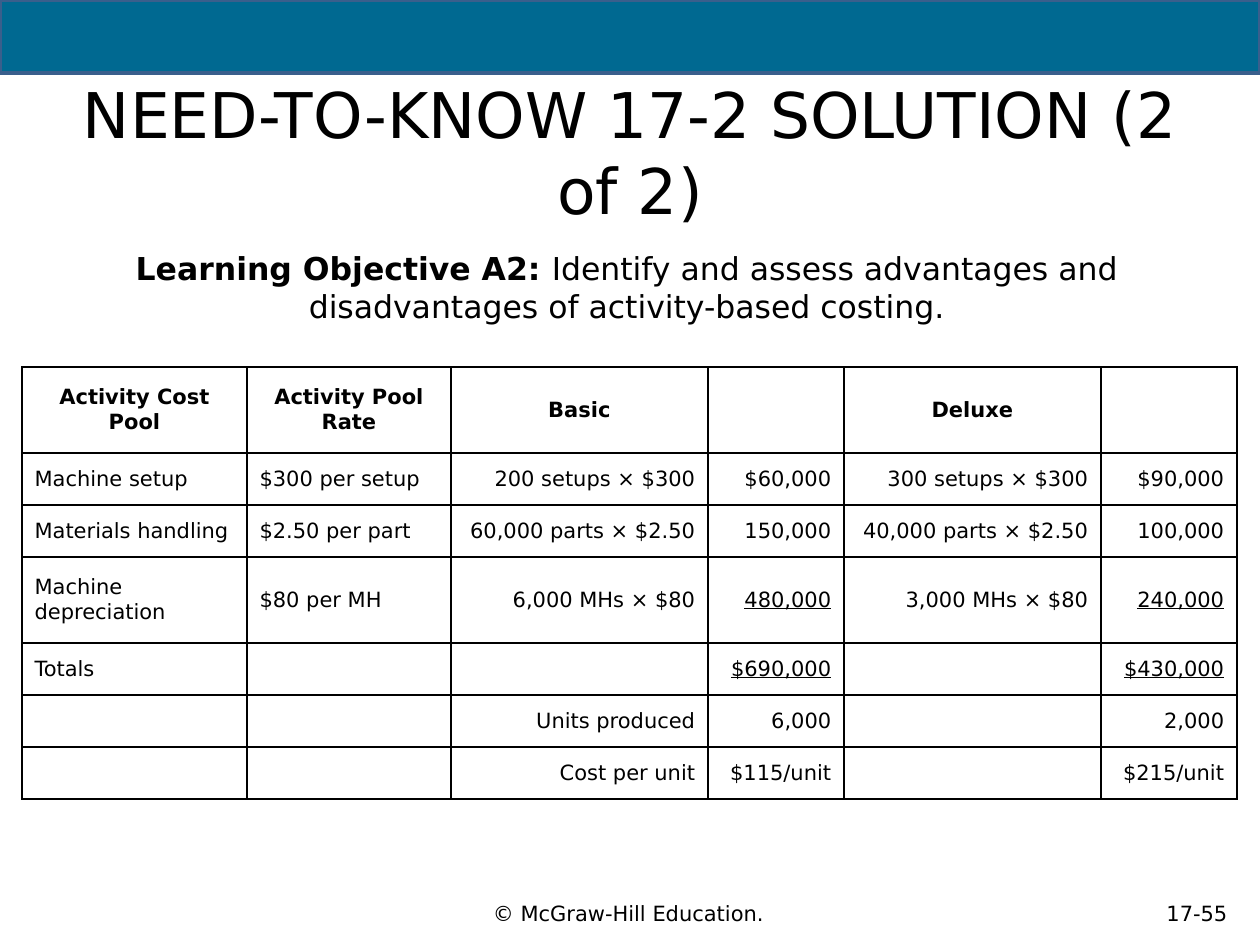
from lxml.etree import SubElement
from pptx import Presentation
from pptx.dml.color import RGBColor
from pptx.enum.shapes import MSO_SHAPE
from pptx.enum.text import MSO_ANCHOR, MSO_AUTO_SIZE, PP_ALIGN
from pptx.oxml.ns import qn
from pptx.util import Emu, Pt

PX_PER_INCH = 126
SLIDE_WIDTH, SLIDE_HEIGHT = 1260, 945
FONT = "DejaVu Sans"
BLACK = RGBColor(0x00, 0x00, 0x00)
WHITE = RGBColor(0xFF, 0xFF, 0xFF)
TEAL = RGBColor(0x00, 0x69, 0x91)
BAND_EDGE = RGBColor(0x3A, 0x5F, 0x8C)

COLUMN_WIDTHS = [225, 204, 257, 136, 257, 136]
ROW_HEIGHTS = [86, 52, 52, 86, 52, 52, 52]
COST_TABLE = [
    ["Activity Cost Pool", "Activity Pool Rate", "Basic", "", "Deluxe", ""],
    ["Machine setup", "$300 per setup", "200 setups × $300", "$60,000",
     "300 setups × $300", "$90,000"],
    ["Materials handling", "$2.50 per part", "60,000 parts × $2.50", "150,000",
     "40,000 parts × $2.50", "100,000"],
    ["Machine depreciation", "$80 per MH", "6,000 MHs × $80", "480,000",
     "3,000 MHs × $80", "240,000"],
    ["Totals", "", "", "$690,000", "", "$430,000"],
    ["", "", "Units produced", "6,000", "", "2,000"],
    ["", "", "Cost per unit", "$115/unit", "", "$215/unit"],
]
UNDERLINED = {"480,000", "240,000", "$690,000", "$430,000"}


def px(length):
    return Emu(round(length * 914400 / PX_PER_INCH))


class SlideBuilder:
    def __init__(self, slide):
        self.slide = slide
        self.font_style = {"name": FONT}

    def style_font(self, font, **values):
        for name, value in {**self.font_style, **values}.items():
            setattr(font, name, value)
        font.color.rgb = BLACK

    def fill_text(self, frame, runs, size, anchor=MSO_ANCHOR.MIDDLE):
        """Fill a frame with one centred paragraph of (text, bold) runs."""
        frame_style = {"word_wrap": True, "auto_size": MSO_AUTO_SIZE.NONE,
                       "vertical_anchor": anchor}
        for name, value in frame_style.items():
            setattr(frame, name, value)
        paragraph = frame.paragraphs[0]
        paragraph.alignment = PP_ALIGN.CENTER
        paragraph.space_before = Pt(0)
        for text, bold in runs:
            run = paragraph.add_run()
            run.text = text
            self.style_font(run.font, size=Pt(size), bold=bold)
        return paragraph

    def place(self, shape, box):
        for name, length in zip(("left", "top", "width", "height"), box):
            setattr(shape, name, px(length))

    def band(self, box):
        shape = self.slide.shapes.add_shape(MSO_SHAPE.RECTANGLE, *map(px, box))
        shape.shadow.inherit = False
        shape.fill.solid()
        shape.fill.fore_color.rgb = TEAL
        shape.line.color.rgb = BAND_EDGE
        shape.line.width = Pt(2)

    def label(self, box, text):
        text_box = self.slide.shapes.add_textbox(*map(px, box))
        self.fill_text(text_box.text_frame, [(text, False)], 12)

    def title(self, box, text):
        title = self.slide.shapes.title
        self.place(title, box)
        self.fill_text(title.text_frame, [(text, False)], 36)

    def body(self, box, runs):
        body = self.slide.placeholders[1]
        self.place(body, box)
        paragraph = self.fill_text(body.text_frame, runs, 18, MSO_ANCHOR.TOP)
        properties = paragraph._p.get_or_add_pPr()
        properties.set("marL", "0")
        properties.set("indent", "0")
        SubElement(properties, qn("a:buNone"))

    def border(self, cell):
        properties = cell._tc.get_or_add_tcPr()
        for position, side in enumerate(("lnL", "lnR", "lnT", "lnB")):
            line = SubElement(properties, qn(f"a:{side}"), w=str(Pt(1)))
            fill = SubElement(line, qn("a:solidFill"))
            SubElement(fill, qn("a:srgbClr"), val=str(BLACK))
            properties.insert(position, line)

    def cell(self, cell, text, alignment, bold):
        cell.fill.solid()
        cell.fill.fore_color.rgb = WHITE
        cell.vertical_anchor = MSO_ANCHOR.MIDDLE
        self.border(cell)
        paragraph = cell.text_frame.paragraphs[0]
        paragraph.alignment = alignment
        cell_style = {"size": Pt(12), "bold": bold, "underline": text in UNDERLINED}
        if text:
            run = paragraph.add_run()
            run.text = text
            self.style_font(run.font, **cell_style)
        else:
            self.style_font(paragraph.font, **cell_style)

    def table(self, left, top, rows):
        box = (left, top, sum(COLUMN_WIDTHS), sum(ROW_HEIGHTS))
        table = self.slide.shapes.add_table(
            len(rows), len(COLUMN_WIDTHS), *map(px, box)).table
        table.first_row = table.horz_banding = False
        for column, width in zip(table.columns, COLUMN_WIDTHS):
            column.width = px(width)
        for row, height in zip(table.rows, ROW_HEIGHTS):
            row.height = px(height)
        for row_index, row in enumerate(rows):
            header = row_index == 0
            for column_index, text in enumerate(row):
                side = PP_ALIGN.LEFT if column_index < 2 else PP_ALIGN.RIGHT
                self.cell(table.cell(row_index, column_index), text,
                          PP_ALIGN.CENTER if header else side, header)


def main():
    presentation = Presentation()
    presentation.slide_width = px(SLIDE_WIDTH)
    presentation.slide_height = px(SLIDE_HEIGHT)
    slide = presentation.slides.add_slide(presentation.slide_layouts[1])
    builder = SlideBuilder(slide)
    builder.band((0, 0, SLIDE_WIDTH, 73))
    builder.label((1134, 882, 126, 63), "17-55")
    builder.label((118, 882, 1021, 63), "© McGraw-Hill Education.")
    builder.title((67, 85, 1126, 133), "NEED-TO-KNOW 17-2 SOLUTION (2 of 2)")
    builder.body((21, 243, 1212, 93), [
        ("Learning Objective A2: ", True),
        ("Identify and assess advantages and disadvantages of "
         "activity-based costing.", False),
    ])
    builder.table(22, 367, COST_TABLE)
    presentation.save("out.pptx")


if __name__ == "__main__":
    main()
